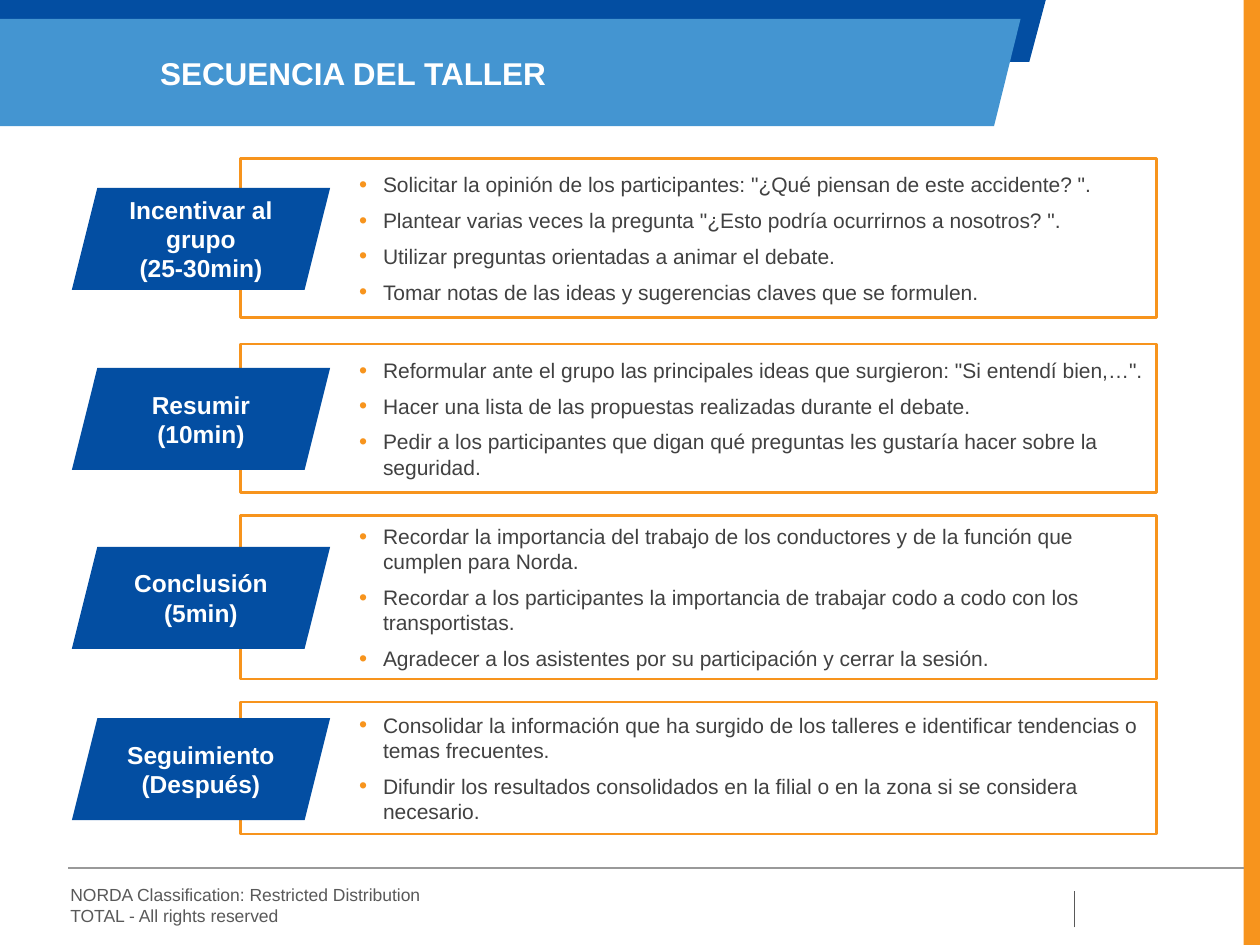
from lxml import etree
from pptx import Presentation
from pptx.dml.color import RGBColor
from pptx.enum.shapes import MSO_CONNECTOR, MSO_SHAPE
from pptx.enum.text import MSO_ANCHOR, MSO_AUTO_SIZE, PP_ALIGN
from pptx.oxml.ns import qn
from pptx.util import Inches, Pt

RECT, SLANT = MSO_SHAPE.RECTANGLE, MSO_SHAPE.PARALLELOGRAM
LINE = MSO_CONNECTOR.STRAIGHT
MID, TOP = MSO_ANCHOR.MIDDLE, MSO_ANCHOR.TOP
LEFT, CENTER = PP_ALIGN.LEFT, PP_ALIGN.CENTER
FIXED = MSO_AUTO_SIZE.NONE
COLORS = {"navy": "034EA2", "blue": "4495D1", "orange": "F7941D",
          "text": "414141", "gray": "595959", "rule": "999999",
          "white": "FFFFFF"}
HUES = {name: RGBColor.from_string(code) for name, code in COLORS.items()}

# Grid: 100 columns by 75 rows
deck = Presentation()
deck.slide_width, deck.slide_height = Inches(10), Inches(7.5)
COL, ROW = deck.slide_width / 100, deck.slide_height / 75
slide = deck.slides.add_slide(deck.slide_layouts[5])
shapes = slide.shapes


def grid(*spots):
    """Turn column, row, column, row... into slide lengths."""
    return [round(n * (ROW if i % 2 else COL)) for i, n in enumerate(spots)]


def style(para, size, hue, bold=False, align=LEFT):
    para.alignment = align
    for run in para.runs:
        run.font.name, run.font.size = "Arial", Pt(size)
        run.font.bold, run.font.color.rgb = bold, HUES[hue]


# Side bar
bar = shapes.add_shape(RECT, *grid(98.7, 0, 1.3, 75))
bar.shadow.inherit = False
bar.fill.solid()
bar.fill.fore_color.rgb = HUES["orange"]
bar.line.fill.background()

# Footer rules
for ends, hue in (((5.4, 68.9, 98.7, 68.9), "rule"),
                  ((85.3, 73.6, 85.3, 70.7), "gray")):
    rule = shapes.add_connector(LINE, *grid(*ends))
    rule.line.color.rgb, rule.line.width = HUES[hue], Pt(0.75)
    etree.SubElement(rule._element.spPr, qn("a:effectLst"))

# Footer text
foot = shapes.add_textbox(*grid(4.6, 69.7, 53.9, 4.4)).text_frame
foot.word_wrap = True
foot.text = "NORDA Classification: Restricted Distribution\nTOTAL - All rights reserved"
for para in foot.paragraphs:
    style(para, 10, "gray")

# Header bands: top, bottom, right end at top and at bottom
for top, base, wide, slim, hue in ((0, 4.9, 83, 81.7, "navy"),
                                   (1.5, 10, 81, 78.9, "blue")):
    pen = shapes.build_freeform(*grid(0, top))
    pen.add_line_segments([grid(wide, top), grid(slim, base), grid(0, base)])
    band = pen.convert_to_shape()
    band.shadow.inherit = False
    band.fill.solid()
    band.fill.fore_color.rgb = HUES[hue]
    band.line.fill.background()

# Title, brought in front of the bands
title = shapes.title
shapes._spTree.append(title._element)
title.left, title.top, title.width, title.height = grid(12.7, 4.3, 77.4, 3)
frame = title.text_frame
frame.text = "SECUENCIA DEL TALLER"
frame.auto_size, frame.vertical_anchor = FIXED, TOP
frame.margin_left = frame.margin_right = 0
frame.margin_top = frame.margin_bottom = 0
style(frame.paragraphs[0], 18, "white", True)

# Steps: box top, box height, tag top, tag text, points
STEPS = [
    (12.6, 12.6, 14.9, "Incentivar al grupo\n(25-30min)", [
        'Solicitar la opinión de los participantes: "¿Qué piensan de este accidente? ".',
        'Plantear varias veces la pregunta "¿Esto podría ocurrirnos a nosotros? ".',
        "Utilizar preguntas orientadas a animar el debate.",
        "Tomar notas de las ideas y sugerencias claves que se formulen."]),
    (27.3, 11.8, 29.2, "Resumir\n(10min)", [
        'Reformular ante el grupo las principales ideas que surgieron: "Si entendí bien,…".',
        "Hacer una lista de las propuestas realizadas durante el debate.",
        "Pedir a los participantes que digan qué preguntas les gustaría hacer sobre la seguridad."]),
    (40.9, 13, 43.4, "Conclusión\n(5min)", [
        "Recordar la importancia del trabajo de los conductores y de la función que cumplen para Norda.",
        "Recordar a los participantes la importancia de trabajar codo a codo con los transportistas.",
        "Agradecer a los asistentes por su participación y cerrar la sesión."]),
    (55.7, 10.5, 57, "Seguimiento\n(Después)", [
        "Consolidar la información que ha surgido de los talleres e identificar tendencias o temas frecuentes.",
        "Difundir los resultados consolidados en la filial o en la zona si se considera necesario."]),
]
for top, high, tag_top, label, points in STEPS:
    # Outlined box with bullets
    box = shapes.add_shape(RECT, *grid(19.1, top, 72.7, high))
    box.shadow.inherit = False
    box.fill.background()
    box.line.color.rgb, box.line.width = HUES["orange"], Pt(1.5)
    frame = box.text_frame
    frame.word_wrap, frame.vertical_anchor = True, MID
    frame.margin_left, frame.margin_right = round(9.4 * COL), 0
    frame.text = "\n".join(points)
    for i, para in enumerate(frame.paragraphs):
        props = para._p.get_or_add_pPr()
        props.set("marL", str(round(1.9 * COL)))
        props.set("indent", str(round(-1.9 * COL)))
        tint = etree.SubElement(props, qn("a:buClr"))
        etree.SubElement(tint, qn("a:srgbClr"), val=COLORS["orange"])
        etree.SubElement(props, qn("a:buSzPct"), val="110000")
        etree.SubElement(props, qn("a:buFont"), typeface="Arial")
        etree.SubElement(props, qn("a:buChar"), char="•")
        para.space_before = Pt(6 if i else 0)
        style(para, 12, "text")

    # Slanted tag
    tag = shapes.add_shape(SLANT, *grid(5.7, tag_top, 20.5, 8.1))
    tag.shadow.inherit = False
    tag.fill.solid()
    tag.fill.fore_color.rgb = HUES["navy"]
    tag.line.fill.background()
    tag.text_frame.word_wrap, tag.text_frame.vertical_anchor = True, MID
    tag.text_frame.text = label
    for para in tag.text_frame.paragraphs:
        style(para, 14, "white", True, CENTER)

deck.save("out.pptx")
